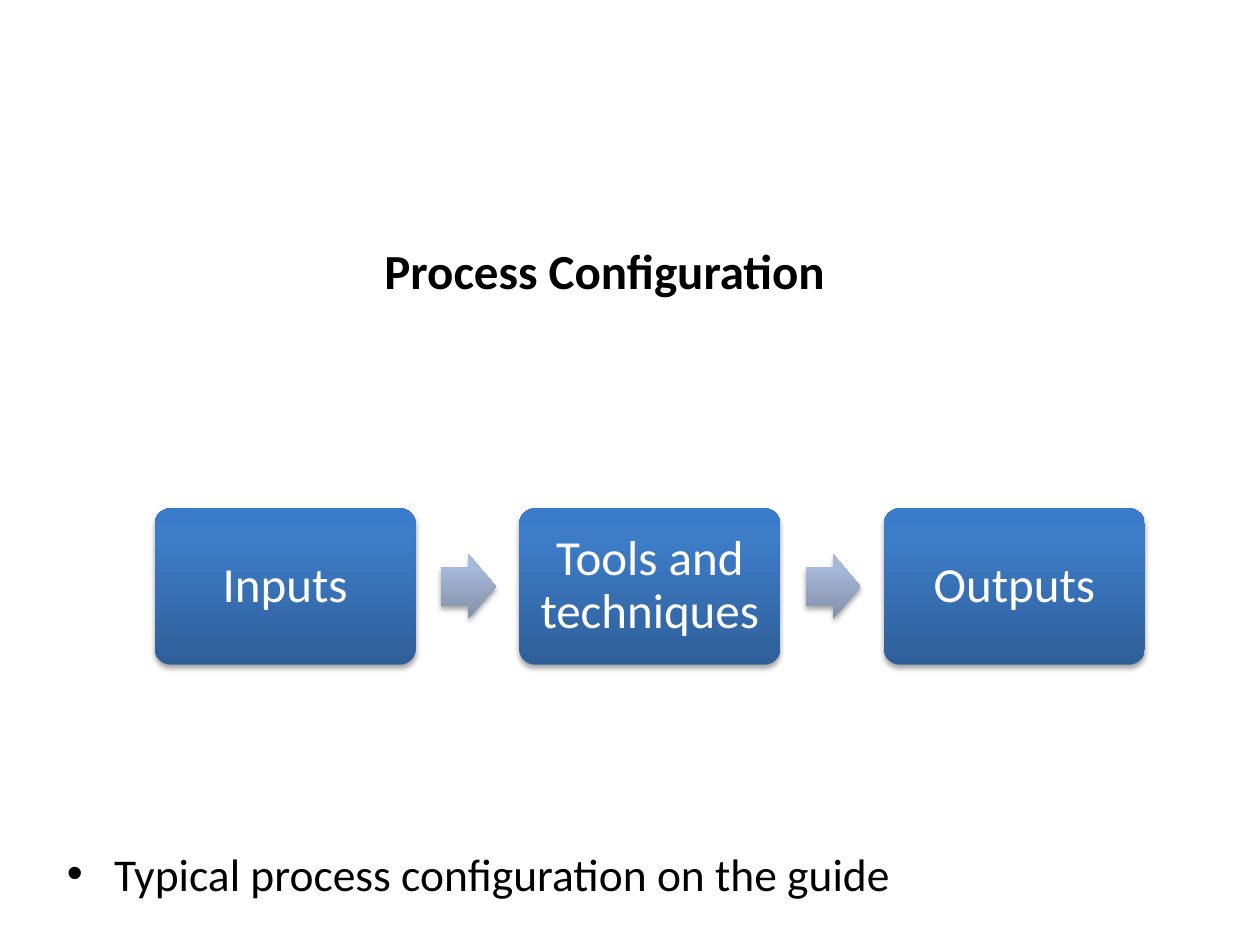
from copy import deepcopy

from lxml.etree import SubElement
from pptx import Presentation
from pptx.dml.color import RGBColor
from pptx.enum.shapes import MSO_SHAPE
from pptx.enum.text import MSO_ANCHOR, PP_ALIGN
from pptx.oxml.ns import qn
from pptx.util import Cm, Pt

FONT = "Calibri"
BLUE = ("2F5F99", "3D7CC7", "3A7CCB")
GREY_BLUE = ("818FA8", "A7B9DA", "A7BADC")
STOP_POSITIONS = (0, 0.8, 1)
STEPS = ("Inputs", "Tools and techniques", "Outputs")
STEP_LEFT, STEP_TOP, STEP_PITCH = 3.12, 10.25, 7.35
STEP_WIDTH, STEP_HEIGHT = 5.26, 3.15
ARROW_OFFSET, ARROW_WIDTH, ARROW_HEIGHT = 5.77, 1.11, 1.3


def color(value):
    return RGBColor.from_string(value)


def set_font(paragraph, size, value, bold=False):
    font = paragraph.font
    font.name = FONT
    font.size = Pt(size)
    font.bold = bold
    font.color.rgb = color(value)


def set_gradient(shape, colors):
    fill = shape.fill
    fill.gradient()
    fill.gradient_angle = 90
    stop_list = shape._element.spPr.find(qn("a:gradFill")).find(qn("a:gsLst"))
    stop_list.append(deepcopy(stop_list[-1]))
    for stop, position, value in zip(fill.gradient_stops, STOP_POSITIONS, colors):
        stop.position = position
        stop.color.rgb = color(value)


def add_shadow(shape):
    shape.shadow.inherit = False
    effects = shape._element.spPr.find(qn("a:effectLst"))
    shadow = SubElement(effects, qn("a:outerShdw"), blurRad=str(Pt(3.1)),
                        dist=str(Pt(1.8)), dir="5400000", rotWithShape="0")
    shade = SubElement(shadow, qn("a:srgbClr"), val="000000")
    SubElement(shade, qn("a:alpha"), val="35000")


def add_gradient_shape(slide, kind, left, top, width, height, adjustments, colors):
    shape = slide.shapes.add_shape(kind, Cm(left), Cm(top), Cm(width), Cm(height))
    for index, adjustment in enumerate(adjustments):
        shape.adjustments[index] = adjustment
    set_gradient(shape, colors)
    shape.line.fill.background()
    add_shadow(shape)
    return shape


def add_step(slide, left, text):
    shape = add_gradient_shape(slide, MSO_SHAPE.ROUNDED_RECTANGLE, left, STEP_TOP,
                               STEP_WIDTH, STEP_HEIGHT, (0.1,), BLUE)
    frame = shape.text_frame
    frame.word_wrap = True
    frame.vertical_anchor = MSO_ANCHOR.MIDDLE
    frame.margin_left = frame.margin_right = Cm(0.3)
    frame.margin_top = frame.margin_bottom = Cm(0.3)
    paragraph = frame.paragraphs[0]
    paragraph.text = text
    paragraph.alignment = PP_ALIGN.CENTER
    paragraph.line_spacing = 0.9
    set_font(paragraph, 28, "FFFFFF")


def add_arrow(slide, left):
    top = STEP_TOP + (STEP_HEIGHT - ARROW_HEIGHT) / 2
    add_gradient_shape(slide, MSO_SHAPE.RIGHT_ARROW, left, top,
                       ARROW_WIDTH, ARROW_HEIGHT, (0.6, 0.5), GREY_BLUE)


def add_text(slide, left, top, width, height, text):
    box = slide.shapes.add_textbox(Cm(left), Cm(top), Cm(width), Cm(height))
    box.text_frame.word_wrap = True
    paragraph = box.text_frame.paragraphs[0]
    paragraph.text = text
    return paragraph


def add_bullet(paragraph, indent):
    properties = paragraph._p.get_or_add_pPr()
    properties.set("marL", str(Cm(indent)))
    properties.set("indent", str(-Cm(indent)))
    SubElement(properties, qn("a:buFont"), typeface="Arial")
    SubElement(properties, qn("a:buChar"), char="•")


def main():
    presentation = Presentation()
    presentation.slide_width = Cm(25.4)
    presentation.slide_height = Cm(19.05)
    slide = presentation.slides.add_slide(presentation.slide_layouts[6])

    title = add_text(slide, 7.5, 4.72, 10.8, 3.84, "Process Configuration")
    title.alignment = PP_ALIGN.JUSTIFY
    set_font(title, 28, "000000", bold=True)

    for index, text in enumerate(STEPS):
        left = STEP_LEFT + index * STEP_PITCH
        add_step(slide, left, text)
        if index < len(STEPS) - 1:
            add_arrow(slide, left + ARROW_OFFSET)

    note = add_text(slide, 1.1, 16.93, 22.86, 1.24,
                    "Typical process configuration on the guide")
    add_bullet(note, 0.95)
    set_font(note, 26, "000000")

    presentation.save("out.pptx")


if __name__ == "__main__":
    main()
